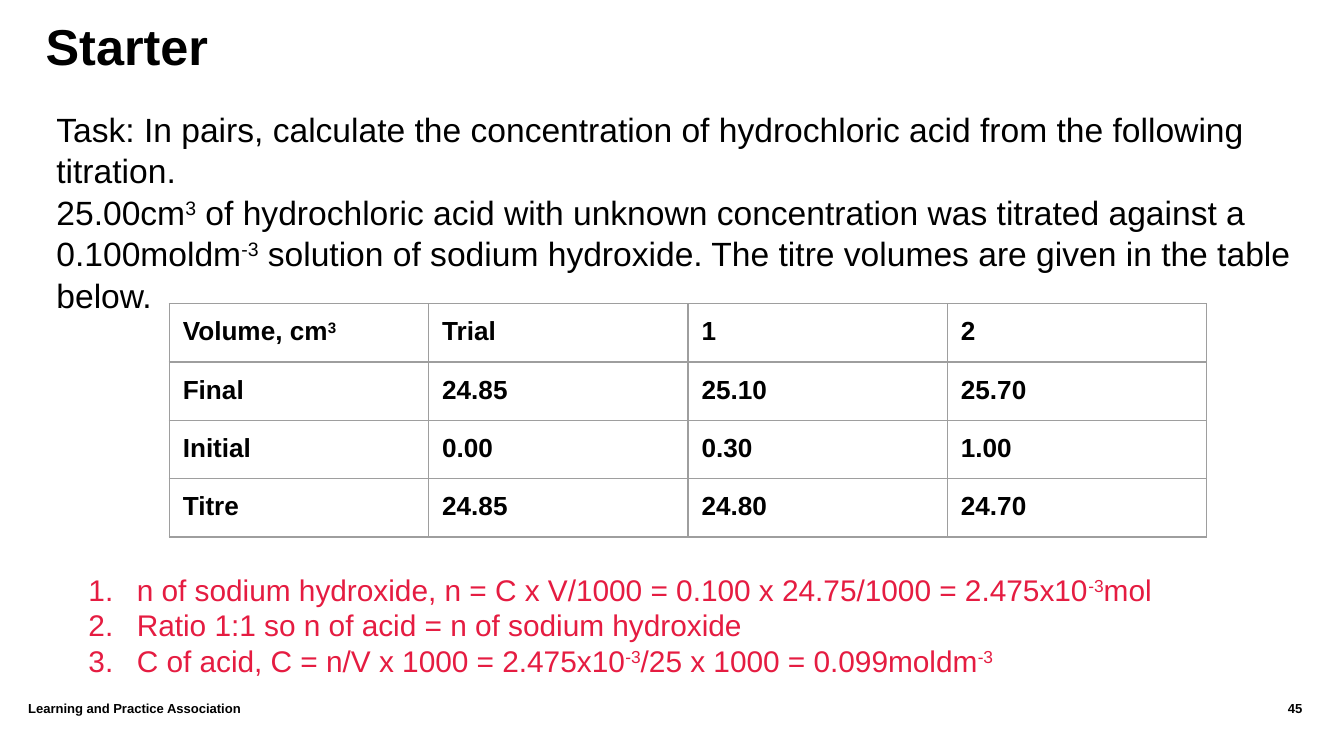
from dataclasses import dataclass

from lxml.etree import SubElement
from pptx import Presentation
from pptx.dml.color import RGBColor
from pptx.enum.text import MSO_ANCHOR, PP_ALIGN
from pptx.oxml import parse_xml
from pptx.oxml.ns import nsdecls, qn
from pptx.util import Inches, Pt


@dataclass(frozen=True)
class Theme:
    font: str = "Arial"
    ink: str = "000000"
    answer: str = "E51C41"
    border: str = "9E9E9E"
    title_size: int = 27
    body_size: int = 18
    answer_size: int = 16
    table_size: int = 14
    footer_size: int = 7


THEME = Theme()

# Every second part of a text split at "^" is superscript
TASK = [
    "Task: In pairs, calculate the concentration of hydrochloric acid from the following titration.",
    "25.00cm^3^ of hydrochloric acid with unknown concentration was titrated against a "
    "0.100moldm^-3^ solution of sodium hydroxide. The titre volumes are given in the table below.",
]
TITRES = [
    ["Volume, cm^3", "Trial", "1", "2"],
    ["Final", "24.85", "25.10", "25.70"],
    ["Initial", "0.00", "0.30", "1.00"],
    ["Titre", "24.85", "24.80", "24.70"],
]
ANSWERS = [
    "n of sodium hydroxide, n = C x V/1000 = 0.100 x 24.75/1000 = 2.475x10^-3^mol",
    "Ratio 1:1 so n of acid = n of sodium hydroxide",
    "C of acid, C = n/V x 1000 = 2.475x10^-3^/25 x 1000 = 0.099moldm^-3",
]


def write_runs(paragraph, text, size, color=THEME.ink, bold=False):
    font_format = {"name": THEME.font, "size": Pt(size), "bold": bold}
    for index, part in enumerate(text.split("^")):
        if not part:
            continue
        run = paragraph.add_run()
        run.text = part
        for name, value in font_format.items():
            setattr(run.font, name, value)
        run.font.color.rgb = RGBColor.from_string(color)
        if index % 2:
            run.font._element.set("baseline", "30000")


def set_margins(target, inset):
    for side in ("left", "top", "right", "bottom"):
        setattr(target, f"margin_{side}", Inches(inset))


def add_text(slide, box, lines, inset=0, paragraph_format=None, **style):
    shape = slide.shapes.add_textbox(*map(Inches, box))
    frame = shape.text_frame
    frame.word_wrap = True
    frame.vertical_anchor = MSO_ANCHOR.TOP
    set_margins(frame, inset)
    for index, line in enumerate(lines):
        paragraph = frame.add_paragraph() if index else frame.paragraphs[0]
        for name, value in (paragraph_format or {}).items():
            setattr(paragraph, name, value)
        write_runs(paragraph, line, **style)
    return shape


def set_cell_borders(cell):
    properties = cell._tc.get_or_add_tcPr()
    for index, side in enumerate("LRTB"):
        properties.insert(index, parse_xml(
            f'<a:ln{side} {nsdecls("a")} w="{Pt(0.75)}"><a:solidFill>'
            f'<a:srgbClr val="{THEME.border}"/></a:solidFill></a:ln{side}>'))


def add_titre_table(slide, box, rows, row_height):
    left, top, width, height = box
    table = slide.shapes.add_table(
        len(rows), len(rows[0]), *map(Inches, box)).table
    table.first_row = table.horz_banding = False
    for column in table.columns:
        column.width = Inches(width / len(rows[0]))
    for row_index, values in enumerate(rows):
        table.rows[row_index].height = Inches(row_height)
        for column_index, value in enumerate(values):
            cell = table.cell(row_index, column_index)
            set_margins(cell, 0.1)
            cell.fill.background()
            set_cell_borders(cell)
            write_runs(cell.text_frame.paragraphs[0], value,
                       THEME.table_size, bold=True)


def add_answers(slide, box, lines):
    shape = add_text(slide, box, lines, inset=0.1,
                     size=THEME.answer_size, color=THEME.answer)
    for paragraph in shape.text_frame.paragraphs:
        properties = paragraph._p.get_or_add_pPr()
        properties.set("marL", str(Inches(0.5)))
        properties.set("indent", str(Inches(-0.36)))
        bullet_color = SubElement(properties, qn("a:buClr"))
        SubElement(bullet_color, qn("a:srgbClr"), val=THEME.answer)
        SubElement(properties, qn("a:buFont"), typeface=THEME.font)
        SubElement(properties, qn("a:buAutoNum"), type="arabicPeriod")


def add_footer(slide, box, owner, number):
    left, top, width, height = box
    number_width = 0.99
    owner_width = 8.41
    style = {"size": THEME.footer_size, "bold": True}
    add_text(slide, (left, top, owner_width, height), [owner], **style)
    add_text(slide, (left + width - number_width, top, number_width, height),
             [number], paragraph_format={"alignment": PP_ALIGN.RIGHT}, **style)


def build_starter_slide(presentation):
    slide = presentation.slides.add_slide(presentation.slide_layouts[6])
    # Title and task
    add_text(slide, (0.34, 0.11, 8.74, 0.76), ["Starter"],
             size=THEME.title_size, bold=True)
    add_text(slide, (0.42, 0.8, 9.4, 3.15), TASK, size=THEME.body_size,
             paragraph_format={"line_spacing": 1.03})
    # Titration results
    add_titre_table(slide, (1.26, 2.26, 7.72, 1.73), TITRES, row_height=0.4)
    # Worked answers
    add_answers(slide, (0.42, 4.15, 9.16, 1.21), ANSWERS)
    # Footer
    add_footer(slide, (0.21, 5.21, 9.48, 0.3),
               "Learning and Practice Association", "45")


def main():
    presentation = Presentation()
    # Widescreen, 16:9
    presentation.slide_width = Inches(10)
    presentation.slide_height = Inches(10 * 9 / 16)
    build_starter_slide(presentation)
    presentation.save("out.pptx")


if __name__ == "__main__":
    main()
